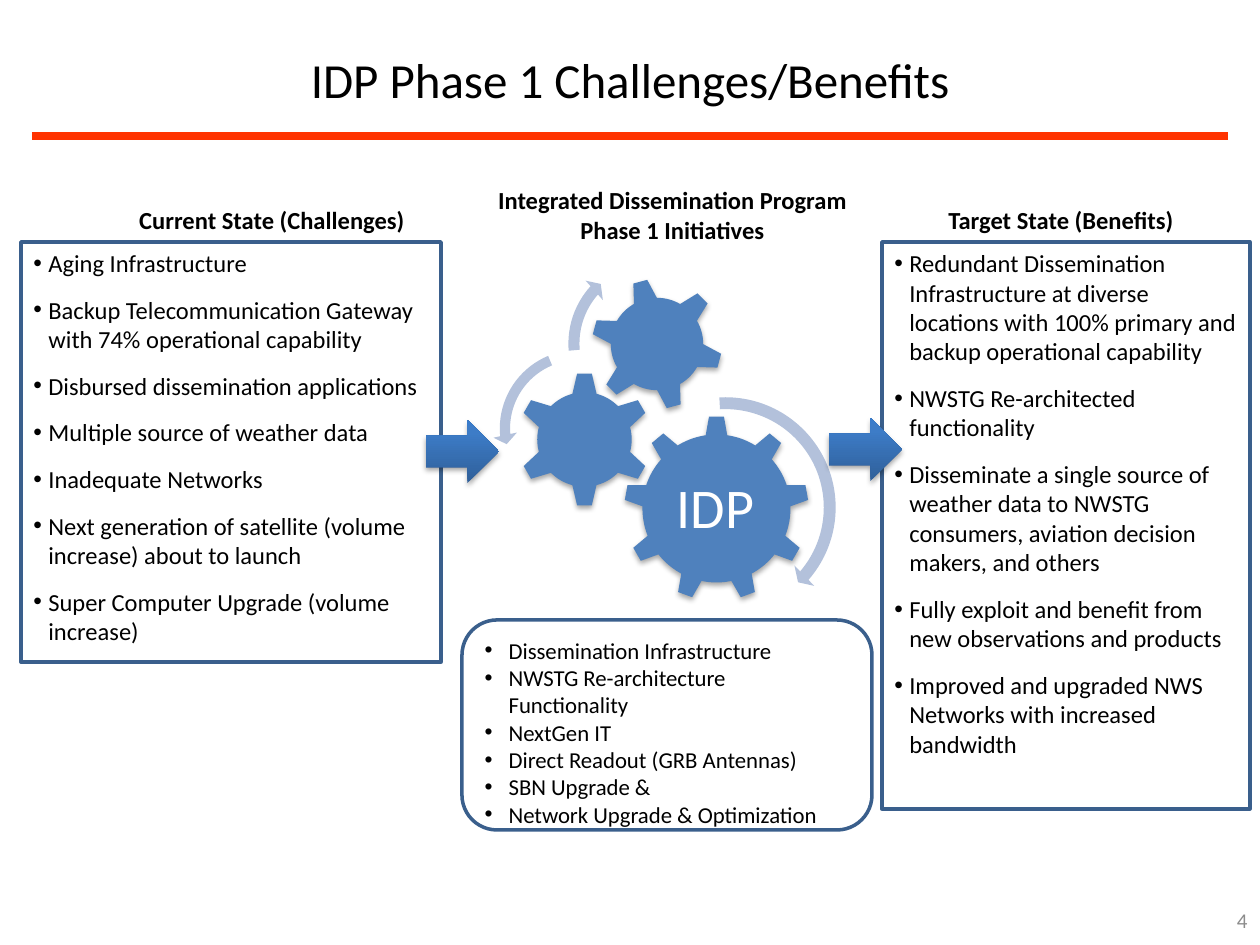
from copy import deepcopy

from lxml.etree import SubElement
from pptx import Presentation
from pptx.dml.color import RGBColor
from pptx.enum.shapes import MSO_CONNECTOR as Connector, MSO_SHAPE as Shape
from pptx.enum.text import MSO_ANCHOR as Anchor, PP_ALIGN as Align
from pptx.oxml.ns import qn
from pptx.util import Emu, Pt

FONT = "Calibri"
BLACK, WHITE, GREY = "000000", "FFFFFF", "8C8C8C"
RED, BORDER, GEAR, SWEEP = "FF3300", "3A5F8C", "4F81BD", "B3C1DB"
ARROW_STOPS = [(0, "2F5F99"), (0.8, "3D7CC7"), (1, "3A7CCB")]

CHALLENGES = [
    "Aging Infrastructure",
    "Backup Telecommunication Gateway with 74% operational capability",
    "Disbursed dissemination applications",
    "Multiple source of weather data",
    "Inadequate Networks",
    "Next generation of satellite (volume increase) about to launch",
    "Super Computer Upgrade (volume increase)",
]
BENEFITS = [
    "Redundant Dissemination Infrastructure at diverse locations with 100% primary "
    "and backup operational capability",
    "NWSTG Re-architected functionality",
    "Disseminate a single source of weather data to NWSTG consumers, aviation "
    "decision makers, and others",
    "Fully exploit and benefit from new observations and products",
    "Improved and upgraded NWS Networks with increased bandwidth",
]
INITIATIVES = [
    "Dissemination Infrastructure",
    "NWSTG Re-architecture Functionality",
    "NextGen IT",
    "Direct Readout (GRB Antennas)",
    "SBN Upgrade &",
    "Network Upgrade & Optimization",
]


def px(length):
    return Emu(round(length * 914400 / 126))


def place(*lengths):
    return [px(length) for length in lengths]


def color(code):
    return RGBColor.from_string(code)


def style(para, size, code, align, bold=False):
    para.alignment = align
    font = para.font
    font.name, font.size, font.bold = FONT, Pt(size), bold
    font.color.rgb = color(code)


def add_bullet(para, indent):
    props = para._p.get_or_add_pPr()
    props.set("marL", str(px(indent)))
    props.set("indent", str(-px(indent)))
    SubElement(props, qn("a:buFont"), typeface="Arial")
    SubElement(props, qn("a:buChar"), char="•")


def add_shadow(shape):
    shape.shadow.inherit = False
    effects = shape._element.spPr.find(qn("a:effectLst"))
    outer = SubElement(effects, qn("a:outerShdw"), blurRad=str(Pt(3.1)),
                       dist=str(Pt(1.8)), dir="5400000", rotWithShape="0")
    tint = SubElement(outer, qn("a:srgbClr"), val=BLACK)
    SubElement(tint, qn("a:alpha"), val="35000")


def add_title(page, text):
    title = page.shapes.title
    title.left, title.top, title.width, title.height = place(63, 0, 1134, 158)
    title.text_frame.text = text
    title.text_frame.vertical_anchor = Anchor.MIDDLE
    style(title.text_frame.paragraphs[0], 28, BLACK, Align.CENTER)


def add_rule(page):
    rule = page.shapes.add_connector(Connector.STRAIGHT, *place(32, 136, 1228, 136))
    rule.line.color.rgb = color(RED)
    rule.line.width = Pt(4.5)
    SubElement(rule._element.spPr, qn("a:effectLst"))


def add_label(shapes, box, lines, size, code, align=Align.CENTER, bold=False,
              anchor=Anchor.TOP):
    frame = shapes.add_textbox(*place(*box)).text_frame
    frame.word_wrap = False
    frame.vertical_anchor = anchor
    for index, line in enumerate(lines):
        para = frame.add_paragraph() if index else frame.paragraphs[0]
        para.text = line
        style(para, size, code, align, bold)


def add_list(page, kind, box, items, size, indent, gap):
    panel = page.shapes.add_shape(kind, *place(*box))
    panel.shadow.inherit = False
    panel.fill.background()
    panel.line.color.rgb = color(BORDER)
    panel.line.width = Pt(2)
    frame = panel.text_frame
    frame.word_wrap = True
    frame.vertical_anchor = Anchor.TOP
    for index, item in enumerate(items):
        para = frame.add_paragraph() if index else frame.paragraphs[0]
        para.text = item
        add_bullet(para, indent)
        style(para, size, BLACK, Align.LEFT)
        para.space_before = Pt(gap if index else 0)


def add_gear(group, kind, left, top, side, rotation=0):
    gear = group.shapes.add_shape(kind, *place(left, top, side, side))
    gear.rotation = rotation
    gear.fill.solid()
    gear.fill.fore_color.rgb = color(GEAR)
    gear.line.fill.background()
    add_shadow(gear)


def add_sweep(group, kind, left, top, side, adjustments):
    sweep = group.shapes.add_shape(kind, *place(left, top, side, side))
    for index, value in enumerate(adjustments):
        sweep.adjustments[index] = value
    sweep.fill.solid()
    sweep.fill.fore_color.rgb = color(SWEEP)
    sweep.line.fill.background()
    sweep.shadow.inherit = False


def add_gears(page):
    group = page.shapes.add_group_shape()
    add_gear(group, Shape.GEAR_9, 624, 416, 185)
    add_label(group.shapes, (660, 459, 111, 94), ["IDP"], 32, WHITE, anchor=Anchor.MIDDLE)
    add_gear(group, Shape.GEAR_6, 517, 372, 135)
    add_gear(group, Shape.GEAR_6, 591, 278, 132, 345)
    add_sweep(group, Shape.CIRCULAR_ARROW, 607, 389, 237, (0.05, 2.99, 24.51, 160.1, 0.06))
    add_sweep(group, Shape.LEFT_CIRCULAR_ARROW, 493, 343, 171,
              (0.06, 4.3, 104.89, 148.38, 0.07))
    add_sweep(group, Shape.CIRCULAR_ARROW, 561, 251, 185,
              (0.06, 3.94, 133.14, 105.08, 0.07))


def add_block_arrow(page, left, top):
    arrow = page.shapes.add_shape(Shape.RIGHT_ARROW, *place(left, top, 73, 63))
    arrow.fill.gradient()
    arrow.fill.gradient_angle = 90
    stop_list = arrow._element.spPr.find(".//" + qn("a:gsLst"))
    stop_list.append(deepcopy(stop_list[-1]))
    for stop, (position, code) in zip(arrow.fill.gradient_stops, ARROW_STOPS):
        stop.position = position
        stop.color.rgb = color(code)
    arrow.line.fill.background()
    add_shadow(arrow)


def main():
    deck = Presentation()
    deck.slide_width, deck.slide_height = place(1260, 945)
    page = deck.slides.add_slide(deck.slide_layouts[5])
    add_rule(page)
    add_title(page, "IDP Phase 1 Challenges/Benefits")
    add_label(page.shapes, (966, 895, 294, 50), ["4"], 12, GREY, Align.RIGHT,
              anchor=Anchor.MIDDLE)
    add_list(page, Shape.RECTANGLE, (21, 242, 420, 420), CHALLENGES, 14, 15, 9.8)
    for box, lines in [
        ((126, 199, 292, 43), ["Current State (Challenges)"]),
        ((484, 179, 377, 72), ["Integrated Dissemination Program", "Phase 1 Initiatives"]),
        ((872, 199, 378, 43), ["Target State (Benefits)"]),
    ]:
        add_label(page.shapes, box, lines, 14, BLACK, bold=True)
    add_list(page, Shape.RECTANGLE, (882, 242, 368, 567), BENEFITS, 14, 15, 9.8)
    add_gears(page)
    add_list(page, Shape.ROUNDED_RECTANGLE, (462, 620, 410, 210), INITIATIVES, 13, 24, 0)
    add_block_arrow(page, 426, 420)
    add_block_arrow(page, 829, 418)
    deck.save("out.pptx")


if __name__ == "__main__":
    main()
